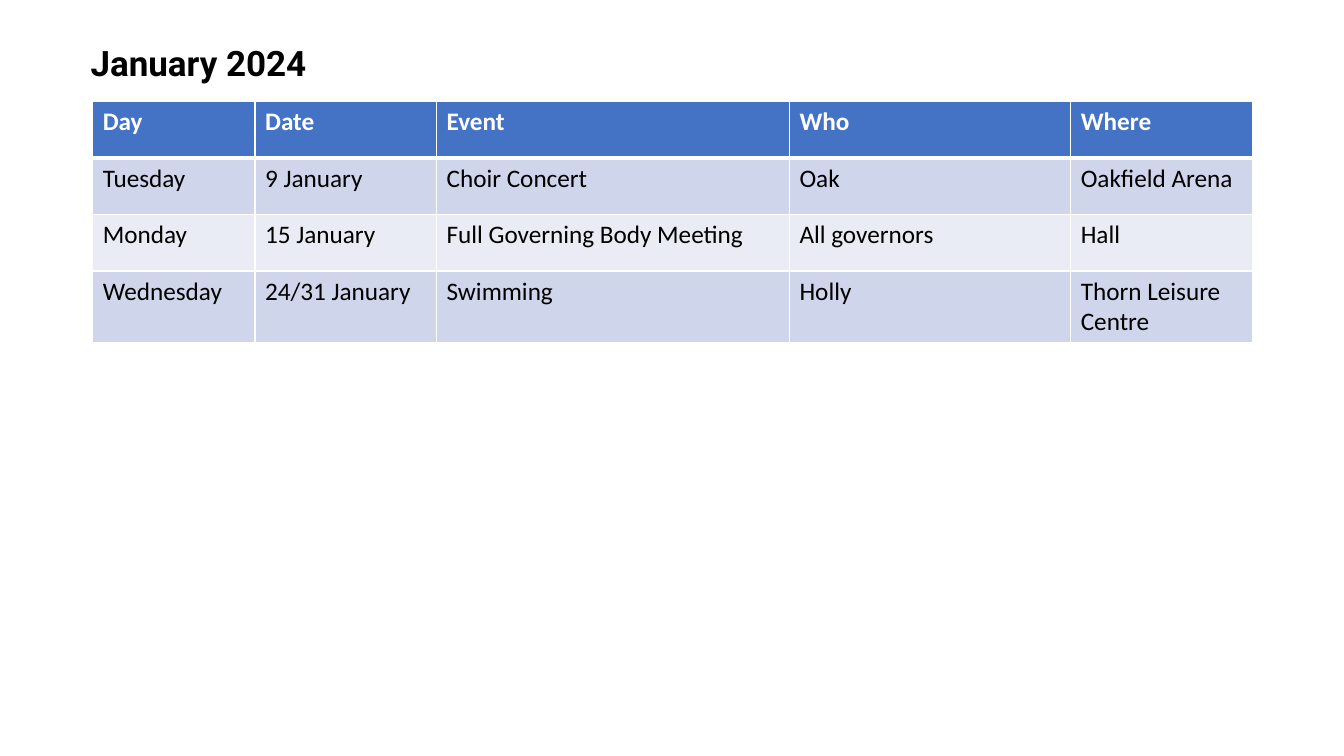
from dataclasses import dataclass

from lxml.etree import SubElement
from pptx import Presentation
from pptx.dml.color import RGBColor as RGB
from pptx.enum.text import MSO_AUTO_SIZE as AutoSize
from pptx.oxml.ns import qn
from pptx.util import Inches, Pt


@dataclass(frozen=True)
class Theme:
    title_font: str = "Roboto"
    table_font: str = "Calibri"
    title_size: int = 25
    table_size: int = 18
    text: str = "000000"
    header_text: str = "FFFFFF"
    header_fill: str = "4472C4"
    bands: tuple = ("CFD5EA", "E9EBF5")
    border: str = "FFFFFF"


THEME = Theme()
COLUMN_WIDTHS = [1.61, 1.8, 3.5, 2.79, 1.8]
ROW_HEIGHT = 0.56
EVENTS = [
    ("Day", "Date", "Event", "Who", "Where"),
    ("Tuesday", "9 January", "Choir Concert", "Oak", "Oakfield Arena"),
    ("Monday", "15 January", "Full Governing Body Meeting", "All governors", "Hall"),
    ("Wednesday", "24/31 January", "Swimming", "Holly", "Thorn Leisure Centre"),
]


def write(frame, text, font, size, color, bold):
    run = frame.paragraphs[0].add_run()
    run.text = text
    formats = {"name": font, "size": Pt(size), "bold": bold}
    for attribute, value in formats.items():
        setattr(run.font, attribute, value)
    run.font.color.rgb = RGB.from_string(color)


def add_borders(cell, widths):
    """Draw cell borders; call before the fill is set, as the schema wants lines first."""
    properties = cell._tc.get_or_add_tcPr()
    for side, width in widths.items():
        line = SubElement(properties, qn(f"a:ln{side}"), w=str(Pt(width)))
        solid = SubElement(line, qn("a:solidFill"))
        SubElement(solid, qn("a:srgbClr"), val=THEME.border)


prs = Presentation()
prs.slide_width, prs.slide_height = Inches(13.33), Inches(7.5)
slide = prs.slides.add_slide(prs.slide_layouts[6])

calendar = slide.shapes.add_table(
    len(EVENTS), len(COLUMN_WIDTHS), Inches(0.92), Inches(1.01),
    Inches(sum(COLUMN_WIDTHS)), Inches(ROW_HEIGHT * len(EVENTS)),
).table
for column, width in zip(calendar.columns, COLUMN_WIDTHS):
    column.width = Inches(width)

for row, event in enumerate(EVENTS):
    is_header = row == 0
    fill = THEME.header_fill if is_header else THEME.bands[(row - 1) % 2]
    color = THEME.header_text if is_header else THEME.text
    borders = {"L": 1, "R": 1, "T": 3 if row == 1 else 1, "B": 3 if is_header else 1}
    for column, detail in enumerate(event):
        cell = calendar.cell(row, column)
        add_borders(cell, borders)
        cell.fill.solid()
        cell.fill.fore_color.rgb = RGB.from_string(fill)
        write(cell.text_frame, detail, THEME.table_font, THEME.table_size, color, is_header)

month = slide.shapes.add_textbox(Inches(0.8), Inches(0.36), Inches(4.45), Inches(0.52)).text_frame
month.word_wrap = True
month.auto_size = AutoSize.SHAPE_TO_FIT_TEXT
write(month, "January 2024", THEME.title_font, THEME.title_size, THEME.text, True)

prs.save("out.pptx")
